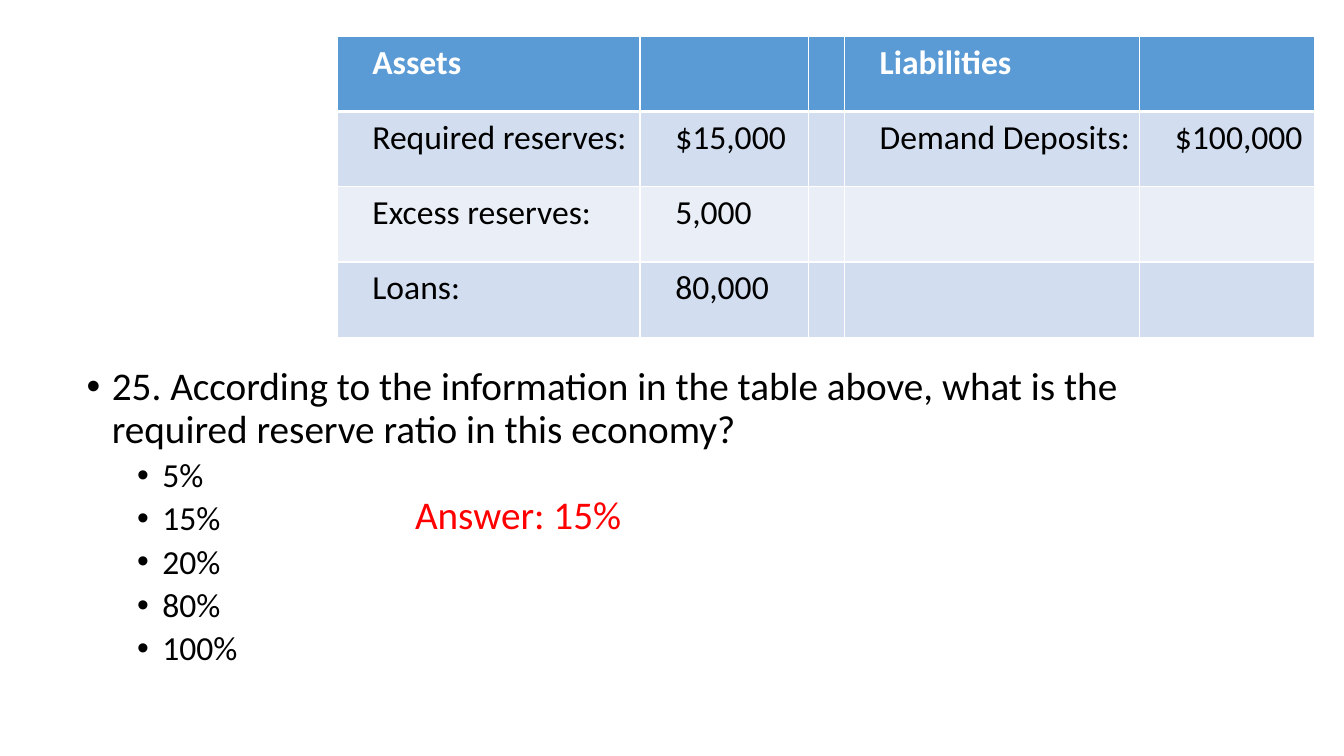
from lxml.etree import SubElement
from pptx import Presentation
from pptx.dml.color import RGBColor
from pptx.enum.text import MSO_ANCHOR, MSO_AUTO_SIZE
from pptx.oxml.ns import qn
from pptx.util import Pt

COLORS = {
    "text": "000000",
    "white": "FFFFFF",
    "answer": "FF0000",
    "header": "5B9BD5",
    "odd_row": "D2DEEF",
    "even_row": "EAEFF7",
}


def write(paragraph, text, size=24, color="text", bold=False, left=0, hanging=0,
          bullet=None, line_spacing=1.0, before=0):
    properties = paragraph._p.get_or_add_pPr()
    properties.set("marL", str(Pt(left)))
    properties.set("indent", str(Pt(-hanging)))
    paragraph.line_spacing = line_spacing
    paragraph.space_before = Pt(before)
    if bullet:
        SubElement(properties, qn("a:buFont"), typeface="Arial")
        SubElement(properties, qn("a:buChar"), char=bullet)
    run = paragraph.add_run()
    run.text = text
    run.font.name = "Calibri"
    run.font.size = Pt(size)
    run.font.bold = bold
    run.font.color.rgb = RGBColor.from_string(COLORS[color])


def draw_border(cell, side, width):
    line = SubElement(cell._tc.get_or_add_tcPr(), qn(f"a:ln{side}"), w=str(Pt(width)))
    fill = SubElement(line, qn("a:solidFill"))
    SubElement(fill, qn("a:srgbClr"), val=COLORS["white"])


deck = Presentation()
deck.slide_width, deck.slide_height = Pt(960), Pt(540)
slide = deck.slides.add_slide(deck.slide_layouts[1])
unused_title = slide.shapes.title._element
unused_title.getparent().remove(unused_title)

question = slide.placeholders[1]
question.left, question.top = Pt(54.7), Pt(258.5)
question.width, question.height = Pt(851.8), Pt(245.5)
question_text = question.text_frame
question_text.word_wrap = True
question_text.auto_size = MSO_AUTO_SIZE.NONE
question_text.vertical_anchor = MSO_ANCHOR.TOP
write(question_text.paragraphs[0],
      "25. According to the information in the table above, "
      "what is the required reserve ratio in this economy?",
      size=28, left=18, hanging=18, bullet="•", line_spacing=0.9)
for choice in ("5%", "15%", "20%", "80%", "100%"):
    choice_line = question_text.add_paragraph()
    choice_line.level = 1
    write(choice_line, choice, left=54, hanging=18, bullet="•",
          line_spacing=0.9, before=5)

balance_rows = [
    ("Assets", "", "", "Liabilities", ""),
    ("Required reserves:", "$15,000", "", "Demand Deposits:", "$100,000"),
    ("Excess reserves:", "5,000", "", "", ""),
    ("Loans:", "80,000", "", "", ""),
]
column_widths = (216.4, 120.2, 25.8, 210.9, 125.1)
row_height = 53.8
balance_sheet = slide.shapes.add_table(
    len(balance_rows), len(column_widths), Pt(240.8), Pt(25.8),
    Pt(sum(column_widths)), Pt(row_height * len(balance_rows))).table
for column, width in zip(balance_sheet.columns, column_widths):
    column.width = Pt(width)

for row_number, entries in enumerate(balance_rows):
    balance_sheet.rows[row_number].height = Pt(row_height)
    is_header = row_number == 0
    row_color = "header" if is_header else ("even_row", "odd_row")[row_number % 2]
    top_width = 3 if row_number == 1 else 1
    bottom_width = 3 if is_header else 1
    for column_number, entry in enumerate(entries):
        cell = balance_sheet.cell(row_number, column_number)
        cell.margin_left = cell.margin_right = Pt(5)
        cell.margin_top = cell.margin_bottom = Pt(0)
        for side, width in (("L", 1), ("R", 1), ("T", top_width), ("B", bottom_width)):
            draw_border(cell, side, width)
        cell.fill.solid()
        cell.fill.fore_color.rgb = RGBColor.from_string(COLORS[row_color])
        if entry:
            write(cell.text_frame.paragraphs[0], entry, bold=is_header, left=20.2,
                  color="white" if is_header else "text", line_spacing=1.15)

answer = slide.shapes.add_textbox(Pt(289.4), Pt(347), Pt(395.3), Pt(41.2))
answer.text_frame.word_wrap = True
answer.text_frame.auto_size = MSO_AUTO_SIZE.SHAPE_TO_FIT_TEXT
write(answer.text_frame.paragraphs[0], "Answer: 15%", size=28, color="answer")

deck.save("out.pptx")
